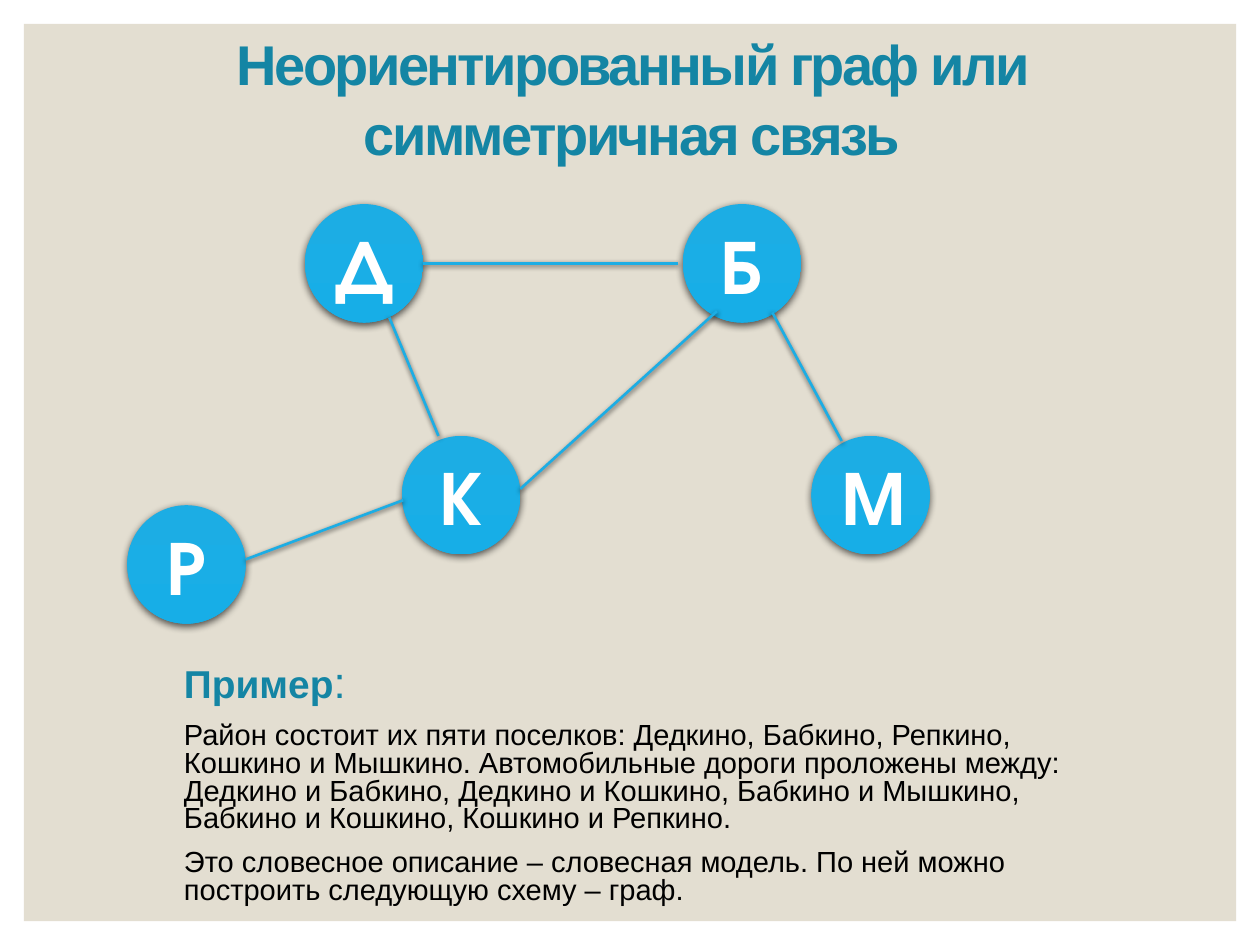
from lxml import etree
from pptx import Presentation
from pptx.dml.color import RGBColor
from pptx.enum import shapes, text
from pptx.oxml.ns import qn
from pptx.util import Inches, Pt

TEAL = RGBColor(0x14, 0x85, 0xA4)
SKY = RGBColor(0x1C, 0xAD, 0xE4)
AZURE = RGBColor(0x17, 0xAE, 0xE7)
SAND = RGBColor(0xE3, 0xDE, 0xD1)
BLACK = RGBColor(0, 0, 0)
WHITE = RGBColor(0xFF, 0xFF, 0xFF)
DIAMETER = 0.94


def add_shadow(shape, blur, distance):
    """Put a soft black shadow straight below the shape; lengths in points."""
    effects = etree.SubElement(shape._element.spPr, qn("a:effectLst"))
    shadow = etree.SubElement(
        effects, qn("a:outerShdw"), blurRad=str(Pt(blur)), dist=str(Pt(distance)),
        dir="5400000", algn="ctr", rotWithShape="0")
    color = etree.SubElement(shadow, qn("a:srgbClr"), val="000000")
    etree.SubElement(color, qn("a:alpha"), val="63000")


def add_span(para, words, size, color, bold=False, font="Arial"):
    span = para.add_run()
    span.text = words
    span.font.name = font
    span.font.size = Pt(size)
    span.font.bold = bold
    span.font.color.rgb = color
    return span


deck = Presentation()
deck.slide_width, deck.slide_height = Inches(10), Inches(7.5)
page = deck.slides.add_slide(deck.slide_layouts[1])

# Sand panel behind everything
panel = page.shapes.add_shape(
    shapes.MSO_SHAPE.RECTANGLE, Inches(0.19), Inches(0.19), Inches(9.62), Inches(7.12))
panel.shadow.inherit = False
panel.fill.solid()
panel.fill.fore_color.rgb = SAND
panel.line.fill.background()
page.shapes._spTree.insert(2, panel._element)

# Title
title = page.shapes.title
title.left, title.top = Inches(1.08), Inches(0.16)
title.width, title.height = Inches(7.87), Inches(1.18)
frame = title.text_frame
frame.auto_size = text.MSO_AUTO_SIZE.NONE
frame.vertical_anchor = text.MSO_ANCHOR.TOP
para = frame.paragraphs[0]
para.alignment = text.PP_ALIGN.CENTER
para.line_spacing = 1.04
span = add_span(para, "Неориентированный граф или симметричная связь", 32, TEAL, True)
span.font._element.set("spc", "-150")

# Example text
body = page.placeholders[1]
body.left, body.top = Inches(0.97), Inches(5.23)
body.width, body.height = Inches(7.97), Inches(1.96)
frame = body.text_frame
frame.auto_size = text.MSO_AUTO_SIZE.NONE
example = [
    [("Пример", 22.2, TEAL, True), (":", 25, TEAL, False)],
    [("Район состоит их пяти поселков: Дедкино, Бабкино, Репкино, Кошкино и Мышкино. "
      "Автомобильные дороги проложены между: Дедкино и Бабкино, Дедкино и Кошкино, "
      "Бабкино и Мышкино, Бабкино и Кошкино, Кошкино и Репкино.", 16.6, BLACK, False)],
    [("Это словесное описание – словесная модель. По ней можно построить следующую "
      "схему – граф.", 16.6, BLACK, False)],
]
for index, spans in enumerate(example):
    para = frame.add_paragraph() if index else frame.paragraphs[0]
    props = para._p.get_or_add_pPr()
    props.set("marL", str(Inches(0.39)))
    props.set("indent", "0")
    etree.SubElement(props, qn("a:buNone"))
    para.line_spacing = 0.8
    para.space_before = Pt(9 if index else 0)
    for words, size, color, bold in spans:
        add_span(para, words, size, color, bold)

# Villages
villages = [("Д", 2.42, 1.62), ("К", 3.19, 3.46), ("Р", 1.01, 4.01),
            ("М", 6.44, 3.46), ("Б", 5.42, 1.62)]
for letter, left, top in villages:
    node = page.shapes.add_shape(
        shapes.MSO_SHAPE.OVAL, Inches(left), Inches(top), Inches(DIAMETER), Inches(DIAMETER))
    node.fill.gradient()
    node.fill.gradient_angle = 270
    for stop, color in zip(node.fill.gradient_stops, (SKY, AZURE)):
        stop.color.rgb = color
    node.line.fill.background()
    add_shadow(node, 4.5, 1.5)
    node.text_frame.vertical_anchor = text.MSO_ANCHOR.MIDDLE
    para = node.text_frame.paragraphs[0]
    para.alignment = text.PP_ALIGN.CENTER
    add_span(para, letter, 44, WHITE, True, "TeX Gyre Adventor")

# Roads: Р–К, Д–К, Д–Б, Б–М, К–Б
roads = [(1.95, 4.44, 3.2, 3.97), (3.09, 2.52, 3.48, 3.46), (3.36, 2.09, 5.38, 2.09),
         (6.13, 2.48, 6.68, 3.5), (4.13, 3.88, 5.69, 2.47)]
for ends in roads:
    road = page.shapes.add_connector(
        shapes.MSO_CONNECTOR.STRAIGHT, *(Inches(value) for value in ends))
    road.line.color.rgb = SKY
    road.line.width = Pt(1.5)
    add_shadow(road, 3, 1)

deck.save("out.pptx")
